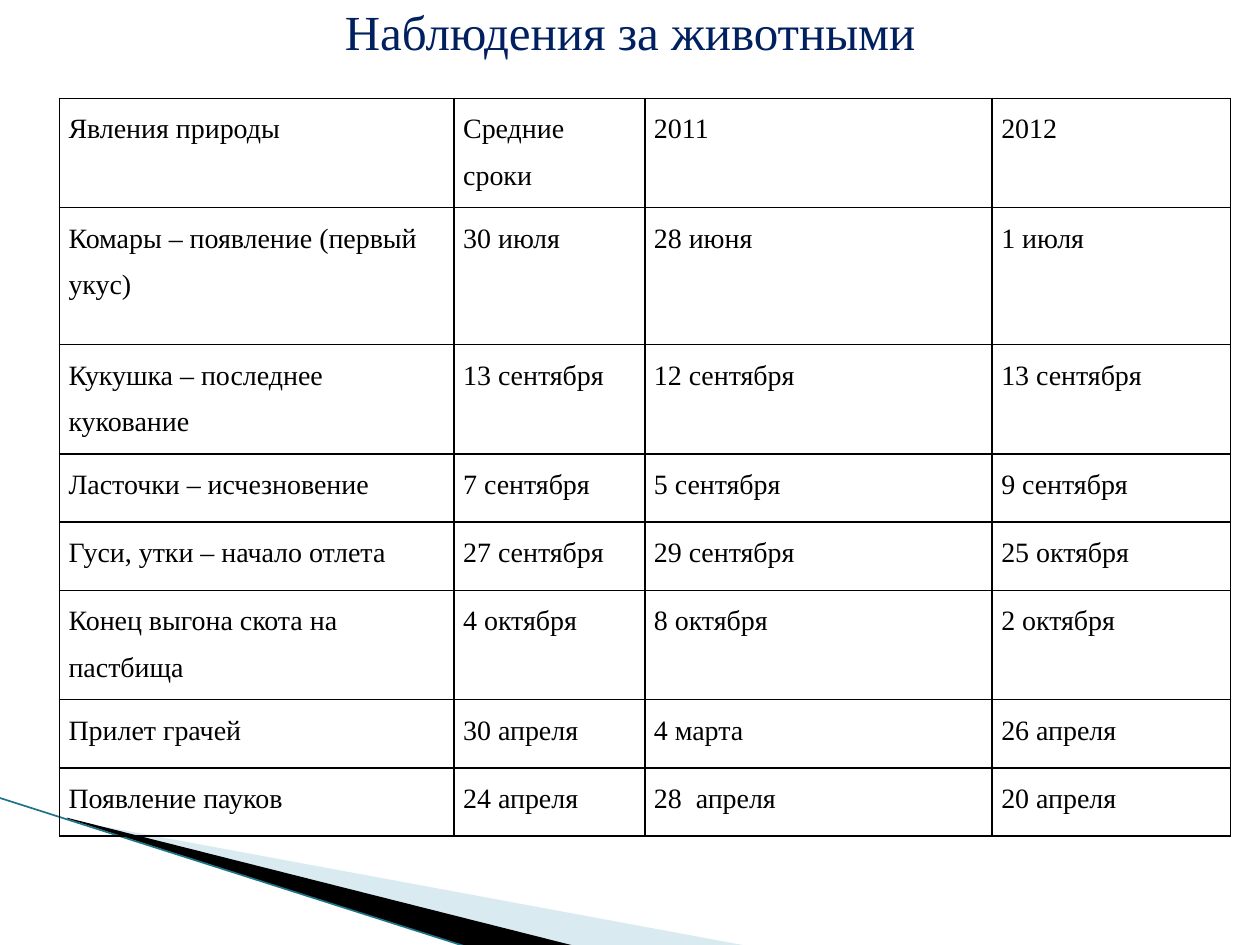
from lxml.etree import SubElement
from pptx import Presentation
from pptx.dml.color import RGBColor
from pptx.enum.shapes import MSO_CONNECTOR
from pptx.enum.text import MSO_ANCHOR, PP_ALIGN
from pptx.oxml import parse_xml
from pptx.oxml.ns import nsdecls, qn
from pptx.util import Pt

TITLE = "Наблюдения за животными"
ROWS = [
    ("Явления природы", "Средние сроки", "2011", "2012"),
    ("Комары – появление (первый укус)", "30 июля", "28 июня", "1 июля"),
    ("Кукушка – последнее кукование", "13 сентября", "12 сентября", "13 сентября"),
    ("Ласточки – исчезновение", "7 сентября", "5 сентября", "9 сентября"),
    ("Гуси, утки – начало отлета", "27 сентября", "29 сентября", "25 октября"),
    ("Конец выгона скота на пастбища", "4 октября", "8 октября", "2 октября"),
    ("Прилет грачей", "30 апреля", "4 марта", "26 апреля"),
    ("Появление пауков", "24 апреля", "28  апреля", "20 апреля"),
]
COL_WIDTHS = [225.5, 109, 198.5, 136.3]
ROW_HEIGHTS = [62.5, 78.2, 62.5, 39, 39, 62.5, 39, 39]
FONT = "Times New Roman"
COLORS = {"title": "002060", "text": "000000", "border": "000000",
          "pale": "A0CBDC", "dark": "000000", "edge": "1F7387"}
WEDGES = [
    ("pale", 40, [(39.6, 468.7), (428.4, 540.7), (328.3, 540.7), (39.6, 468)]),
    ("dark", 100, [(38.2, 467.3), (329, 540.7), (267.8, 541.4), (38.9, 468)]),
]


def rgb(name):
    return RGBColor.from_string(COLORS[name])


def style(p, size, color):
    for r in p.runs:
        r.font.name = FONT
        r.font.size = Pt(size)
        r.font.color.rgb = rgb(color)


def add_wedge(s, color, opacity, points):
    start, *rest = [(Pt(x), Pt(y)) for x, y in points]
    builder = s.shapes.build_freeform(*start, scale=1.0)
    builder.add_line_segments(rest, close=True)
    sp = builder.convert_to_shape()
    sp.shadow.inherit = False
    sp.fill.solid()
    sp.fill.fore_color.rgb = rgb(color)
    sp.line.fill.background()
    if opacity < 100:
        clr = sp.fill._xPr.find(".//" + qn("a:srgbClr"))
        SubElement(clr, qn("a:alpha")).set("val", str(opacity * 1000))


def add_edge(s):
    line = s.shapes.add_connector(
        MSO_CONNECTOR.STRAIGHT, Pt(-0.7), Pt(455.8), Pt(267.8), Pt(541.4))
    line.line.color.rgb = rgb("edge")
    line.line.width = Pt(0.95)
    SubElement(line._element.spPr, qn("a:effectLst"))


def set_borders(cell):
    tcPr = cell._tc.get_or_add_tcPr()
    for i, side in enumerate(("lnL", "lnR", "lnT", "lnB")):
        tcPr.insert(i, parse_xml(
            f'<a:{side} {nsdecls("a")} w="{Pt(1)}"><a:solidFill>'
            f'<a:srgbClr val="{COLORS["border"]}"/></a:solidFill></a:{side}>'))


def add_observations(s):
    frame = s.shapes.add_table(
        len(ROWS), len(COL_WIDTHS), Pt(34), Pt(56.2),
        Pt(sum(COL_WIDTHS)), Pt(sum(ROW_HEIGHTS)))
    table = frame.table
    table.first_row = table.horz_banding = False
    for col, width in zip(table.columns, COL_WIDTHS):
        col.width = Pt(width)
    for row, height, texts in zip(table.rows, ROW_HEIGHTS, ROWS):
        row.height = Pt(height)
        for cell, text in zip(row.cells, texts):
            cell.margin_left = cell.margin_right = Pt(5.2)
            cell.margin_top = cell.margin_bottom = 0
            cell.fill.background()
            set_borders(cell)
            p = cell.text_frame.paragraphs[0]
            p.text = text
            p.line_spacing = 1.5
            style(p, 16, "text")


def add_title(s):
    sp = s.shapes.title
    sp.left, sp.top, sp.width, sp.height = Pt(188), Pt(-3), Pt(344), Pt(41)
    tf = sp.text_frame
    tf.text = TITLE
    tf.word_wrap = False
    tf.vertical_anchor = MSO_ANCHOR.MIDDLE
    p = tf.paragraphs[0]
    p.alignment = PP_ALIGN.CENTER
    style(p, 28, "title")


def main():
    prs = Presentation()
    prs.slide_width, prs.slide_height = Pt(720), Pt(540)
    s = prs.slides.add_slide(prs.slide_layouts[5])
    for wedge in WEDGES:
        add_wedge(s, *wedge)
    add_edge(s)
    add_observations(s)
    add_title(s)
    prs.save("out.pptx")


if __name__ == "__main__":
    main()
